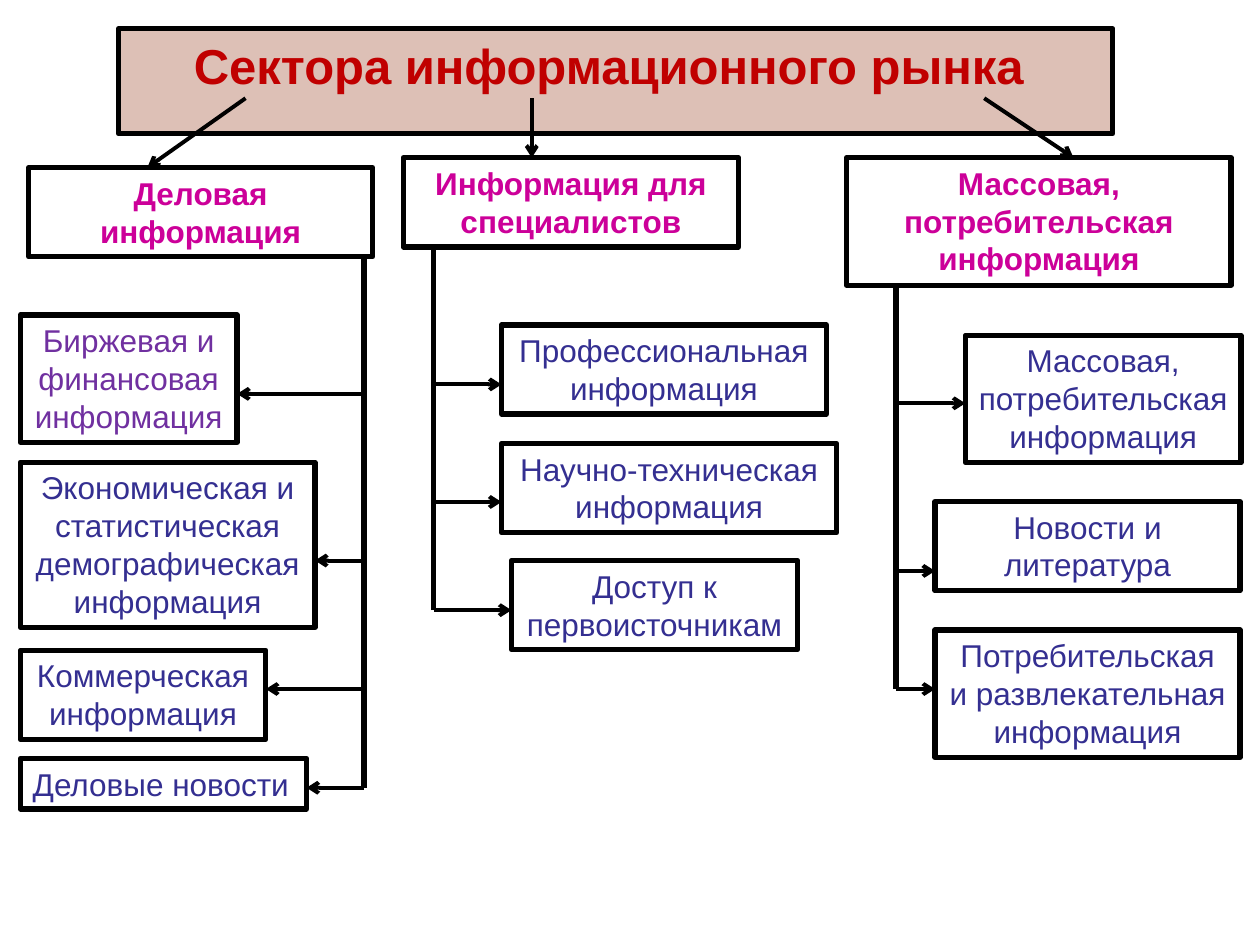
from dataclasses import dataclass

from lxml.etree import SubElement
from pptx import Presentation
from pptx.dml.color import RGBColor
from pptx.enum.shapes import MSO_CONNECTOR as Conn, MSO_SHAPE as Form
from pptx.enum.text import MSO_ANCHOR as Anchor, MSO_AUTO_SIZE as Fit, PP_ALIGN as Align
from pptx.oxml.ns import qn
from pptx.util import Cm, Pt

BLACK, RED, PINK, BLUE, VIOLET = "000000", "C00000", "CC0099", "342F91", "7030A0"
HIGH = {1: 1.02, 2: 1.8, 3: 2.57, 4: 3.33}  # box height by count of text lines
START = 1.98  # where the arrows leave the title


@dataclass
class Box:
    text: str
    left: float
    top: float
    width: float
    lines: int
    join: float = 0  # height at which the arrow meets the box
    color: str = BLUE
    hang: float = 0


@dataclass
class Sector:
    head: Box
    trunk: float
    start: float  # arrow from the title: x at its start and end
    end: float
    items: list[Box]


def paint(target, color: str) -> None:
    if hasattr(target, "solid"):
        target.solid()
        target = target.fore_color
    target.rgb = RGBColor.from_string(color)


def style(shape, text: str, color: str, size: int, bold: bool) -> None:
    paint(shape.line.fill, BLACK)
    shape.line.width = Pt(3)
    frame = shape.text_frame
    frame.text = text
    look = {"word_wrap": True, "auto_size": Fit.SHAPE_TO_FIT_TEXT,
            "vertical_anchor": Anchor.TOP}
    for key, value in look.items():
        setattr(frame, key, value)
    para = frame.paragraphs[0]
    para.alignment = Align.CENTER
    font = para.runs[0].font
    for key, value in {"name": "Arial", "size": Pt(size), "bold": bold}.items():
        setattr(font, key, value)
    paint(font.color, color)


def draw_box(slide, box: Box, bold: bool = False) -> None:
    shape = slide.shapes.add_shape(Form.RECTANGLE, Cm(box.left), Cm(box.top),
                                   Cm(box.width), Cm(HIGH[box.lines]))
    shape.shadow.inherit = False
    shape.fill.background()
    style(shape, box.text, box.color, 18, bold)
    if box.hang:
        para = shape.text_frame.paragraphs[0]
        para.alignment = Align.LEFT
        props = para._p.get_or_add_pPr()
        props.set("marL", str(Cm(box.hang)))
        props.set("indent", str(-Cm(box.hang)))


def draw_line(slide, x1: float, y1: float, x2: float, y2: float,
              width: float = 2.25, arrow: bool = True) -> None:
    link = slide.shapes.add_connector(Conn.STRAIGHT, Cm(x1), Cm(y1), Cm(x2), Cm(y2))
    paint(link.line.fill, BLACK)
    link.line.width = Pt(width)
    if arrow:
        SubElement(link.line._get_or_add_ln(), qn("a:tailEnd"), type="arrow")
    SubElement(link._element.spPr, qn("a:effectLst"))


def draw_sector(slide, part: Sector) -> None:
    head = part.head
    draw_box(slide, head, bold=True)
    draw_line(slide, part.start, START, part.end, head.top)
    # Trunk down to the last item, with a branch to each one
    draw_line(slide, part.trunk, part.items[-1].join, part.trunk,
              head.top + HIGH[head.lines], width=3, arrow=False)
    for item in part.items:
        draw_box(slide, item)
        edge = item.left if item.left > part.trunk else item.left + item.width
        draw_line(slide, part.trunk, item.join, edge, item.join)


SECTORS = [
    Sector(Box("Деловая информация", 0.58, 3.38, 6.93, 2, color=PINK), 7.34, 4.95, 2.97, [
        Box("Биржевая и финансовая информация", 0.41, 6.35, 4.37, 3, 7.94, VIOLET),
        Box("Экономическая и статистическая демографическая информация",
            0.41, 9.32, 5.94, 4, 11.3),
        Box("Коммерческая информация", 0.41, 13.11, 4.95, 2, 13.89),
        Box("Деловые новости", 0.41, 15.29, 5.77, 1, 15.88, hang=0.97),
    ]),
    Sector(Box("Информация для специалистов", 8.13, 3.18, 6.76, 2, color=PINK),
           8.74, 10.72, 10.72, [
        Box("Профессиональная информация", 10.11, 6.55, 6.55, 2, 7.75),
        Box("Научно-техническая информация", 10.11, 8.94, 6.76, 2, 10.12),
        Box("Доступ к первоисточникам", 10.31, 11.3, 5.77, 2, 12.3),
    ]),
    Sector(Box("Массовая, потребительская информация", 17.07, 3.18, 7.75, 3, color=PINK),
           18.06, 19.84, 21.64, [
        Box("Массовая, потребительская информация", 19.46, 6.76, 5.56, 3, 8.13),
        Box("Новости и литература", 18.85, 10.11, 6.15, 2, 11.51),
        Box("Потребительская и развлекательная информация", 18.85, 12.7, 6.15, 3, 13.89),
    ]),
]


def main() -> None:
    deck = Presentation()
    deck.slide_width, deck.slide_height = Cm(25.4), Cm(19.05)
    slide = deck.slides.add_slide(deck.slide_layouts[5])

    # Title
    title = slide.shapes.title
    place = {"left": 2.39, "top": 0.58, "width": 20.04, "height": 1.45}
    for key, value in place.items():
        setattr(title, key, Cm(value))
    paint(title.fill, "DDC0B6")
    style(title, "Сектора информационного рынка ", RED, 28, True)

    # Sectors of the market
    for part in SECTORS:
        draw_sector(slide, part)
    deck.save("out.pptx")


if __name__ == "__main__":
    main()
